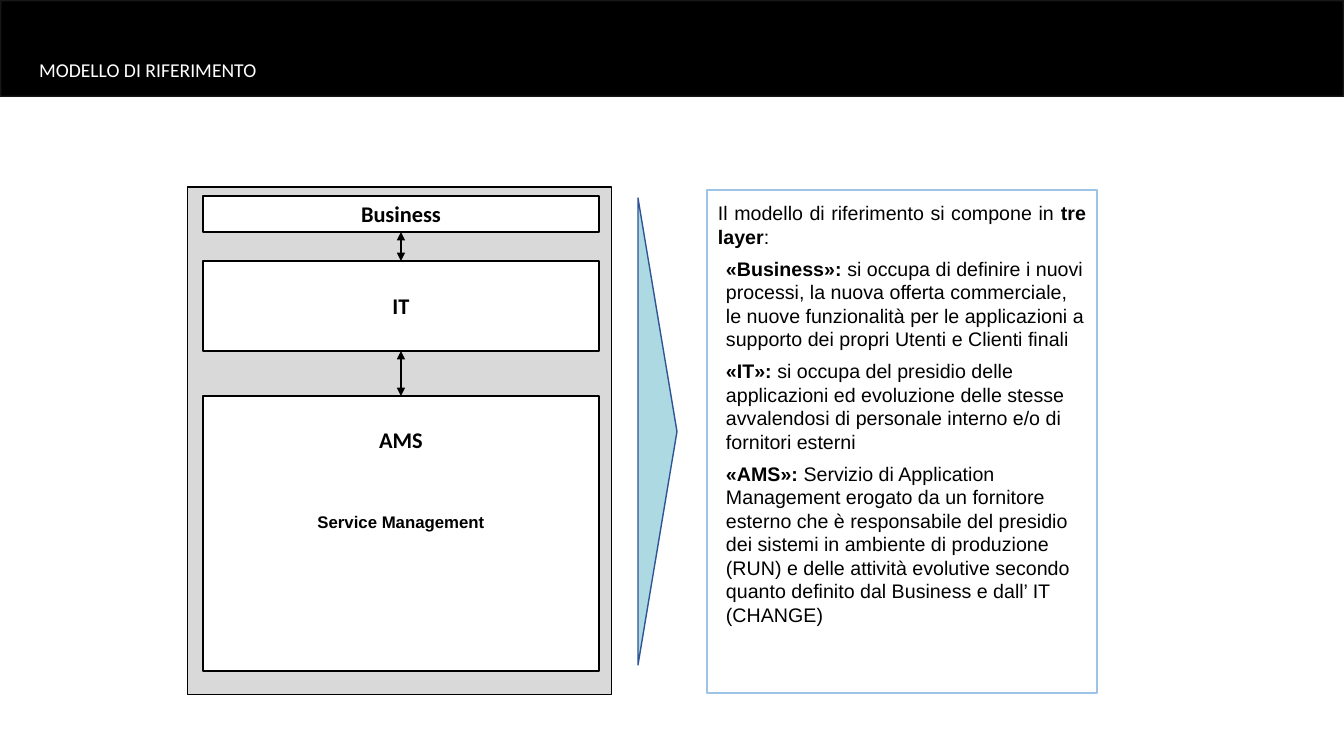
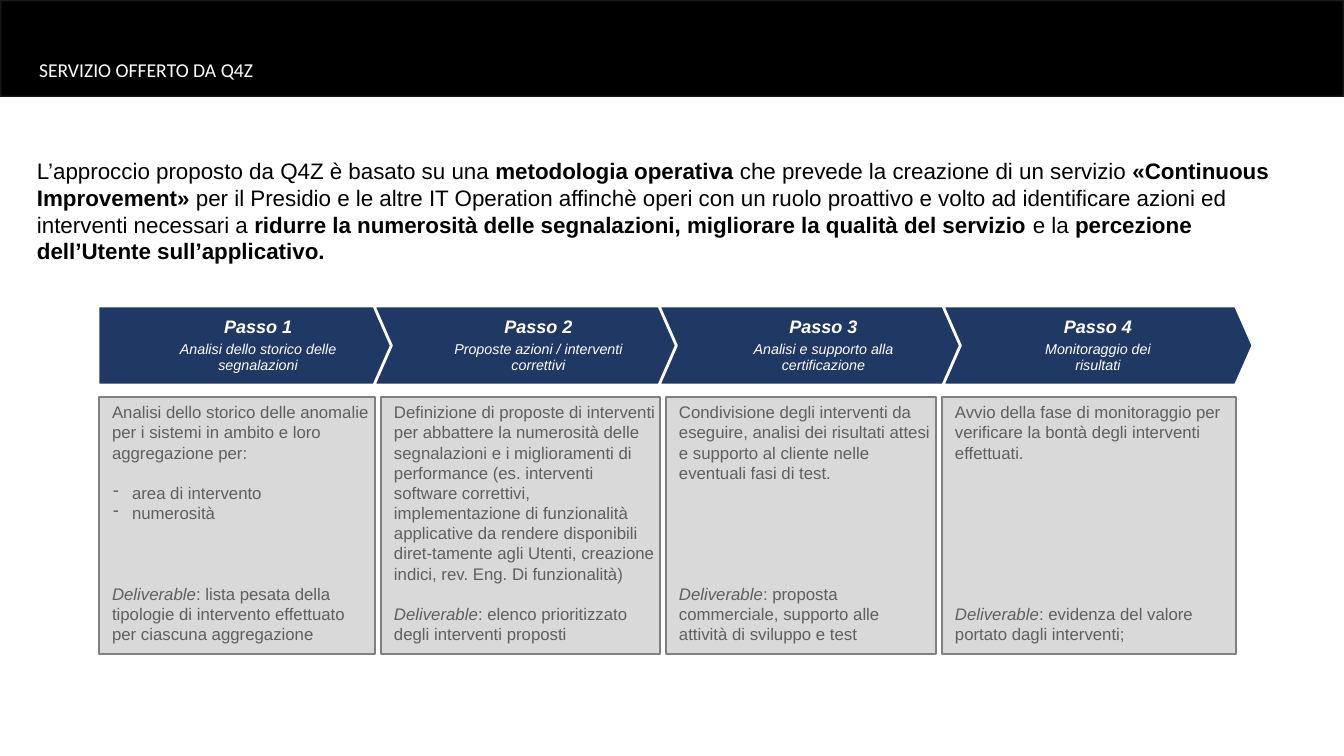
from lxml import etree
from pptx import Presentation
from pptx.dml.color import RGBColor
from pptx.enum.shapes import MSO_CONNECTOR, MSO_SHAPE
from pptx.enum.text import MSO_ANCHOR, MSO_AUTO_SIZE, PP_ALIGN
from pptx.oxml.ns import qn
from pptx.util import Emu, Pt

RECTANGLE = MSO_SHAPE.RECTANGLE
TRIANGLE = MSO_SHAPE.ISOSCELES_TRIANGLE
PENTAGON = MSO_SHAPE.PENTAGON
CHEVRON = MSO_SHAPE.CHEVRON
TOP, MIDDLE = MSO_ANCHOR.TOP, MSO_ANCHOR.MIDDLE
LEFT, CENTER, JUSTIFY = PP_ALIGN.LEFT, PP_ALIGN.CENTER, PP_ALIGN.JUSTIFY

SLIDE_WIDTH, SLIDE_HEIGHT = 1344, 756
EMU_PER_PX = 12192000 / SLIDE_WIDTH
BLANK_LINE = 14.4

COLORS = {
    "black": "000000",
    "white": "FFFFFF",
    "band_line": "EBEBEB",
    "grey": "D9D9D9",
    "card_line": "808080",
    "card_text": "5F5F5F",
    "pointer": "ACD9E2",
    "pointer_line": "2F5597",
    "panel_line": "9DC3E6",
    "navy": "203864",
}

LAYERS_TEXT = [
    "Il modello di riferimento si compone in *tre layer*:",
    "*«Business»: *si occupa di definire i nuovi processi, la nuova offerta commerciale, "
    "le nuove funzionalità per le applicazioni a supporto dei propri Utenti e Clienti finali",
    "*«IT»: *si occupa del presidio delle applicazioni ed evoluzione delle stesse "
    "avvalendosi di personale interno e/o di fornitori esterni",
    "*«AMS»: *Servizio di Application Management erogato da un fornitore esterno che è "
    "responsabile del presidio dei sistemi in ambiente di produzione (RUN) e delle attività "
    "evolutive secondo quanto definito dal Business e dall’ IT (CHANGE)",
]

INTRO = (
    "L’approccio proposto da Q4Z è basato su una *metodologia operativa* che prevede la "
    "creazione di un servizio *«Continuous Improvement» *per il Presidio e le altre IT "
    "Operation affinchè operi con un ruolo proattivo e volto ad identificare azioni ed "
    "interventi necessari a *ridurre la numerosità delle segnalazioni, migliorare la qualità "
    "del servizio *e la* percezione dell’Utente sull’applicativo.*"
)

STEPS = [
    (98, 329, "Analisi dello storico delle segnalazioni"),
    (374, 329, "Proposte azioni / interventi correttivi"),
    (659, 329, "Analisi e supporto alla certificazione"),
    (943, 310, "Monitoraggio dei\nrisultati"),
]

CARDS = [
    (276, "Analisi dello storico delle anomalie per i sistemi in ambito e loro "
          "aggregazione per:",
     ["area di intervento", "numerosità"], 3,
     "lista pesata della tipologie di intervento effettuato per ciascuna aggregazione"),
    (279, "Definizione di proposte di interventi per abbattere la numerosità delle "
          "segnalazioni e i miglioramenti di performance (es. interventi software correttivi, "
          "implementazione di funzionalità applicative da rendere disponibili diret-tamente "
          "agli Utenti, creazione indici, rev. Eng. Di funzionalità)",
     [], 1, "elenco prioritizzato degli interventi proposti"),
    (270, "Condivisione degli interventi da eseguire, analisi dei risultati attesi e supporto "
          "al cliente nelle eventuali fasi di test.",
     [], 5, "proposta commerciale, supporto alle attività di sviluppo e test"),
    (294, "Avvio della fase di monitoraggio per verificare la bontà degli interventi effettuati.",
     [], 7, "evidenza del valore portato dagli interventi;"),
]


def px(length):
    return Emu(round(length * EMU_PER_PX))


def color(name):
    return RGBColor.from_string(COLORS[name])


def add_box(page, kind, frame, fill, line, weight):
    box = page.shapes.add_shape(kind, *map(px, frame))
    box.shadow.inherit = False
    if fill:
        box.fill.solid()
        box.fill.fore_color.rgb = color(fill)
    else:
        box.fill.background()
    box.line.color.rgb = color(line)
    box.line.width = Pt(weight)
    return box


def set_frame(box, anchor=TOP, margins=(10, 5, 10, 5)):
    frame = box.text_frame
    frame.word_wrap = True
    frame.auto_size = MSO_AUTO_SIZE.NONE
    frame.vertical_anchor = anchor
    (frame.margin_left, frame.margin_top,
     frame.margin_right, frame.margin_bottom) = map(px, margins)
    return frame


def add_para(frame, text, size, ink="black", font="Arial", bold=False, italic=False,
             accent="bold", align=LEFT, before=0, after=0, spacing=None, indent=0, dash=0):
    para = frame.paragraphs[0]
    if para.runs:
        para = frame.add_paragraph()
    properties = para._p.get_or_add_pPr()
    if indent:
        properties.set("marL", str(px(indent)))
    if dash:
        properties.set("indent", str(-px(dash)))
        etree.SubElement(properties, qn("a:buChar")).set("char", "-")
    para.alignment = align
    if before:
        para.space_before = Pt(before)
    if after:
        para.space_after = Pt(after)
    if spacing:
        para.line_spacing = spacing
    for index, part in enumerate(text.split("*")):
        for row, piece in enumerate(part.split("\n")):
            if row:
                para.add_line_break()
            if not piece:
                continue
            span = para.add_run()
            span.text = piece
            span.font.size = Pt(size)
            span.font.name = font
            span.font.color.rgb = color(ink)
            span.font.bold = bold or (index % 2 == 1 and accent == "bold")
            span.font.italic = italic or (index % 2 == 1 and accent == "italic")


def add_page(deck, title):
    page = deck.slides.add_slide(deck.slide_layouts[5])
    box = page.shapes.title
    box.left, box.top, box.width, box.height = map(px, (36, 55, 1160, 30))
    add_para(set_frame(box, MIDDLE, (3, 3, 3, 3)), title, 14, "white", "Calibri")
    return page


def move_band_to_layout(page):
    band = add_box(page, RECTANGLE, (0, 0, SLIDE_WIDTH, 97), "black", "band_line", 2)
    line_color = band.element.spPr.find(qn("a:ln")).find(".//" + qn("a:srgbClr"))
    etree.SubElement(line_color, qn("a:alpha")).set("val", "10000")
    page.slide_layout.shapes.element.insert(2, band.element)


def add_layer(page, top, height, label=None):
    box = add_box(page, RECTANGLE, (203, top, 396, height), "white", "black", 1)
    if label:
        add_para(set_frame(box, MIDDLE), label, 16, font="Calibri", bold=True, align=CENTER)
    return box


def join_layers(page, upper, lower):
    arrow = page.shapes.add_connector(MSO_CONNECTOR.STRAIGHT, 0, 0, 0, 0)
    arrow.begin_connect(upper, 2)
    arrow.end_connect(lower, 0)
    arrow.line.color.rgb = color("black")
    arrow.line.width = Pt(1)
    properties = arrow.element.spPr
    for end in ("a:headEnd", "a:tailEnd"):
        etree.SubElement(properties.find(qn("a:ln")), qn(end)).set("type", "triangle")
    etree.SubElement(properties, qn("a:effectLst"))


def build_model(page):
    add_box(page, RECTANGLE, (188, 187, 424, 508), "grey", "black", 0.75)
    business = add_layer(page, 196, 36, "Business")
    technology = add_layer(page, 261, 90, "IT")
    service = add_layer(page, 396, 275)
    frame = set_frame(service, TOP, (4, 30, 4, 5))
    add_para(frame, "AMS", 16, font="Calibri", bold=True, align=CENTER)
    add_para(frame, "Service Management", 12, bold=True, align=CENTER, before=42)
    join_layers(page, business, technology)
    join_layers(page, technology, service)

    pointer = add_box(page, TRIANGLE, (424, 412, 467, 39), "pointer", "pointer_line", 1)
    pointer.rotation = 90

    panel = add_box(page, RECTANGLE, (707, 190, 390, 503), None, "panel_line", 1)
    frame = set_frame(panel, TOP, (11, 11, 11, 11))
    add_para(frame, LAYERS_TEXT[0], 14, align=JUSTIFY)
    for text in LAYERS_TEXT[1:]:
        add_para(frame, text, 14, before=6, indent=8)


def add_step(page, number, left, width, text):
    kind = PENTAGON if number == 1 else CHEVRON
    box = add_box(page, kind, (left, 306, width, 79), "navy", "white", 2)
    box.adjustments[0] = 0.22
    frame = set_frame(box, MIDDLE, (41, 2, 41, 2))
    style = {"ink": "white", "italic": True, "align": CENTER, "spacing": 0.9, "after": 4}
    add_para(frame, f"Passo {number}", 12.9, bold=True, **style)
    add_para(frame, text, 10.2, **style)


def add_card(page, left, width, text, items, blank_lines, deliverable):
    box = add_box(page, RECTANGLE, (left, 397, width, 257), "grey", "card_line", 1)
    frame = set_frame(box, TOP, (4, 5, 4, 5))
    style = {"size": 12, "ink": "card_text", "accent": "italic"}
    add_para(frame, text, indent=9, **style)
    for index, item in enumerate(items):
        add_para(frame, item, indent=29, dash=19, before=0 if index else BLANK_LINE, **style)
    add_para(frame, f"*Deliverable*: {deliverable}", indent=9,
             before=blank_lines * BLANK_LINE, **style)


def build_service(page):
    intro = page.shapes.add_textbox(*map(px, (27, 152, 1275, 119)))
    add_para(set_frame(intro), INTRO, 16)
    for number, step in enumerate(STEPS, 1):
        add_step(page, number, *step)
    left, gap = 99, 6
    for width, *content in CARDS:
        add_card(page, left, width, *content)
        left += width + gap


def main():
    deck = Presentation()
    deck.slide_width, deck.slide_height = px(SLIDE_WIDTH), px(SLIDE_HEIGHT)
    model = add_page(deck, "MODELLO DI RIFERIMENTO")
    move_band_to_layout(model)
    build_model(model)
    build_service(add_page(deck, "SERVIZIO OFFERTO DA Q4Z"))
    deck.save("out.pptx")


if __name__ == "__main__":
    main()
